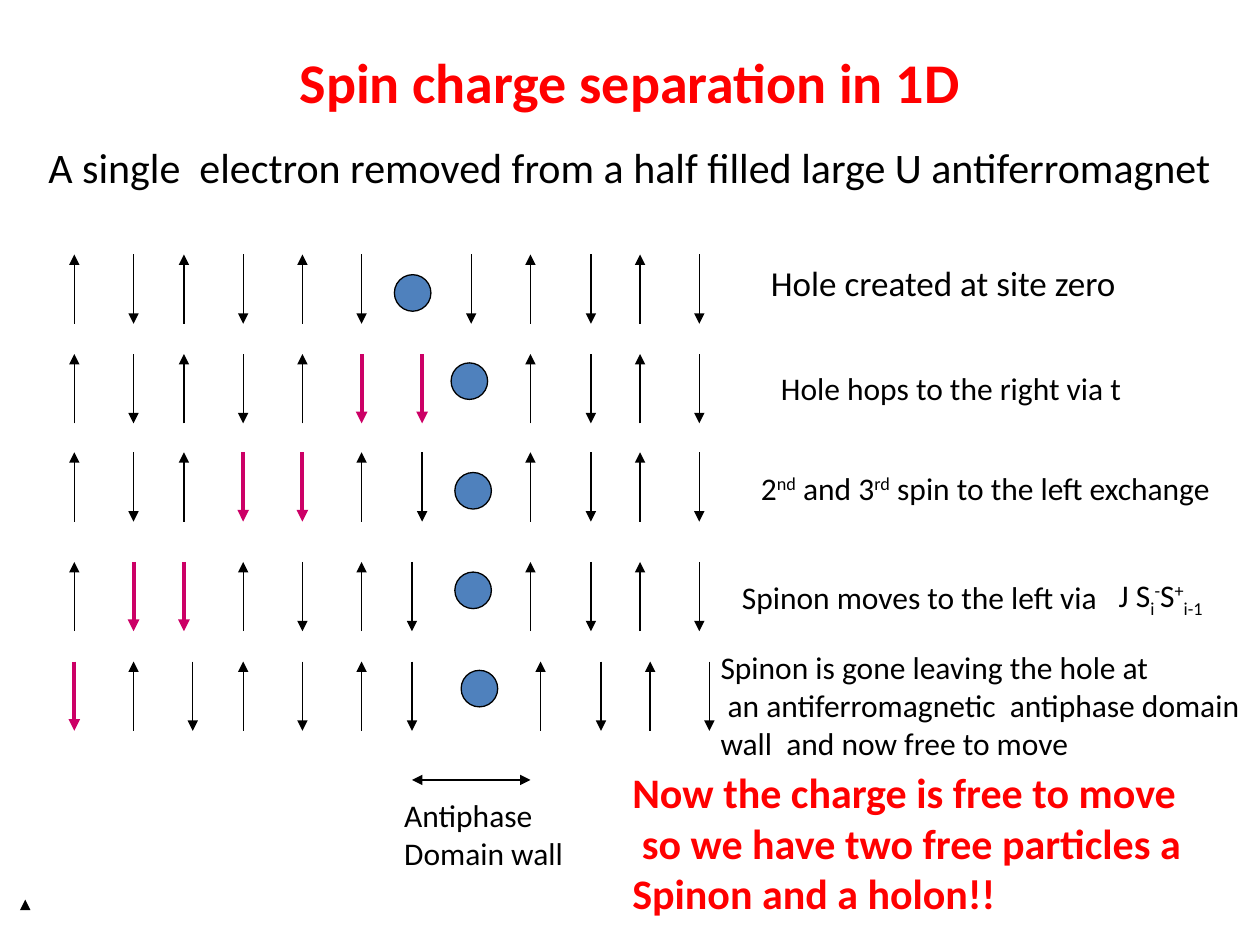
from lxml import etree
from pptx import Presentation
from pptx.dml.color import RGBColor
from pptx.enum.shapes import MSO_CONNECTOR, MSO_SHAPE
from pptx.enum.text import MSO_ANCHOR, PP_ALIGN
from pptx.oxml.ns import qn
from pptx.util import Inches, Pt

STRAIGHT = MSO_CONNECTOR.STRAIGHT
OVAL = MSO_SHAPE.OVAL
MIDDLE = MSO_ANCHOR.MIDDLE
LEFT, CENTER = PP_ALIGN.LEFT, PP_ALIGN.CENTER
BLACK, RED, PINK, BLUE = "000000", "FF0000", "CC0066", "4F81BD"
SUPER, SUB = 30, -25

prs = Presentation()
prs.slide_width, prs.slide_height = Inches(10), Inches(7.5)
s = prs.slides.add_slide(prs.slide_layouts[6])
rgb = RGBColor.from_string


def add_arrow(x1, y1, x2, y2, color=BLACK, width=0.75, ends=("tailEnd",)):
    c = s.shapes.add_connector(STRAIGHT, Inches(x1), Inches(y1), Inches(x2), Inches(y2))
    c.line.color.rgb = rgb(color)
    c.line.width = Pt(width)
    ln = c.line._get_or_add_ln()
    for end in ends:
        etree.SubElement(ln, qn("a:" + end), type="triangle")
    etree.SubElement(c._element.spPr, qn("a:effectLst"))


def add_text(box, lines, size, color=BLACK, bold=False, wrap=False, align=LEFT):
    tf = s.shapes.add_textbox(*[Inches(v) for v in box]).text_frame
    tf.word_wrap = wrap
    tf.vertical_anchor = MIDDLE
    for i, runs in enumerate(lines):
        p = tf.paragraphs[0] if i == 0 else tf.add_paragraph()
        p.alignment = align
        for text, baseline in runs:
            r = p.add_run()
            r.text = text
            r.font.name = "Calibri"
            r.font.size = Pt(size)
            r.font.bold = bold
            r.font.color.rgb = rgb(color)
            if baseline:
                r.font._element.set("baseline", str(baseline * 1000))


add_text((0.5, 0.3, 9, 0.69), [[("Spin charge separation in 1D", 0)]], 32, RED, True, True, CENTER)

# u: up, d: down, D: highlighted down, "." : hole
sites = [0.59, 1.06, 1.46, 1.93, 2.4, 2.87, 3.35, 3.74, 4.21, 4.69, 5.08, 5.55]
shifted = sites[:6] + [3.27] + sites[7:]
final = sites[:2] + [1.53] + shifted[3:8] + [x + 0.08 for x in sites[8:]]
chains = [
    (2.02, sites, "ududud.dudud", 3.13, 2.18),
    (2.81, sites, "ududuDD.udud", 3.58, 2.88),
    (3.59, sites, "uduDDud.udud", 3.61, 3.75),
    (4.46, shifted, "uDDudud.udud", 3.61, 4.54),
    (5.25, final, "Dududud.udud", 3.66, 5.32),
]
for top, columns, spins, hole_x, hole_y in chains:
    bottom = top + 0.55
    for x, spin in zip(columns, spins):
        if spin == "u":
            add_arrow(x, bottom, x, top)
        elif spin == "d":
            add_arrow(x, top, x, bottom)
        elif spin == "D":
            add_arrow(x, top, x, bottom, PINK, 2.25)
    sp = s.shapes.add_shape(OVAL, Inches(hole_x), Inches(hole_y), Inches(0.29), Inches(0.29))
    sp.shadow.inherit = False
    sp.fill.solid()
    sp.fill.fore_color.rgb = rgb(BLUE)
    sp.line.color.rgb = rgb(BLACK)
    sp.line.width = Pt(0.75)

add_arrow(0.2, 7.21, 0.2, 7.14)
add_arrow(3.27, 6.19, 4.21, 6.19, ends=("headEnd", "tailEnd"))

add_text((3.11, 6.27, 1.56, 0.7), [[("Antiphase", 0)], [("Domain wall", 0)]], 18)
add_text((4.92, 6.03, 4.68, 1.31), [
    [("Now the charge is free to move", 0)],
    [(" so we have two free particles a", 0)],
    [("Spinon and a holon!!", 0)],
], 24, RED, True)
add_text((0.21, 1.07, 9.59, 0.5),
         [[(" A single  electron removed from a half filled large U antiferromagnet", 0)]], 24)
add_text((6.02, 2.02, 2.97, 0.44), [[("Hole created at site zero", 0)]], 20)
add_text((6.1, 2.88, 2.94, 0.4), [[("Hole hops to the right via t", 0)]], 18)
add_text((5.94, 3.67, 3.86, 0.4), [[
    ("2", 0), ("nd", SUPER), (" and 3", 0), ("rd", SUPER), (" spin to the left exchange", 0),
]], 18)
add_text((5.79, 4.54, 3.2, 0.4), [[("Spinon moves to the left via", 0)]], 18)
add_text((8.78, 4.54, 0.92, 0.4), [[
    ("J S", 0), ("i", SUB), ("-", SUPER), ("S", 0), ("+", SUPER), ("i-1", SUB),
]], 18)
add_text((5.62, 5.09, 4.38, 1.01), [
    [("Spinon is gone leaving the hole at", 0)],
    [(" an antiferromagnetic  antiphase domain", 0)],
    [("wall  and now free to move", 0)],
], 18)

prs.save("out.pptx")
